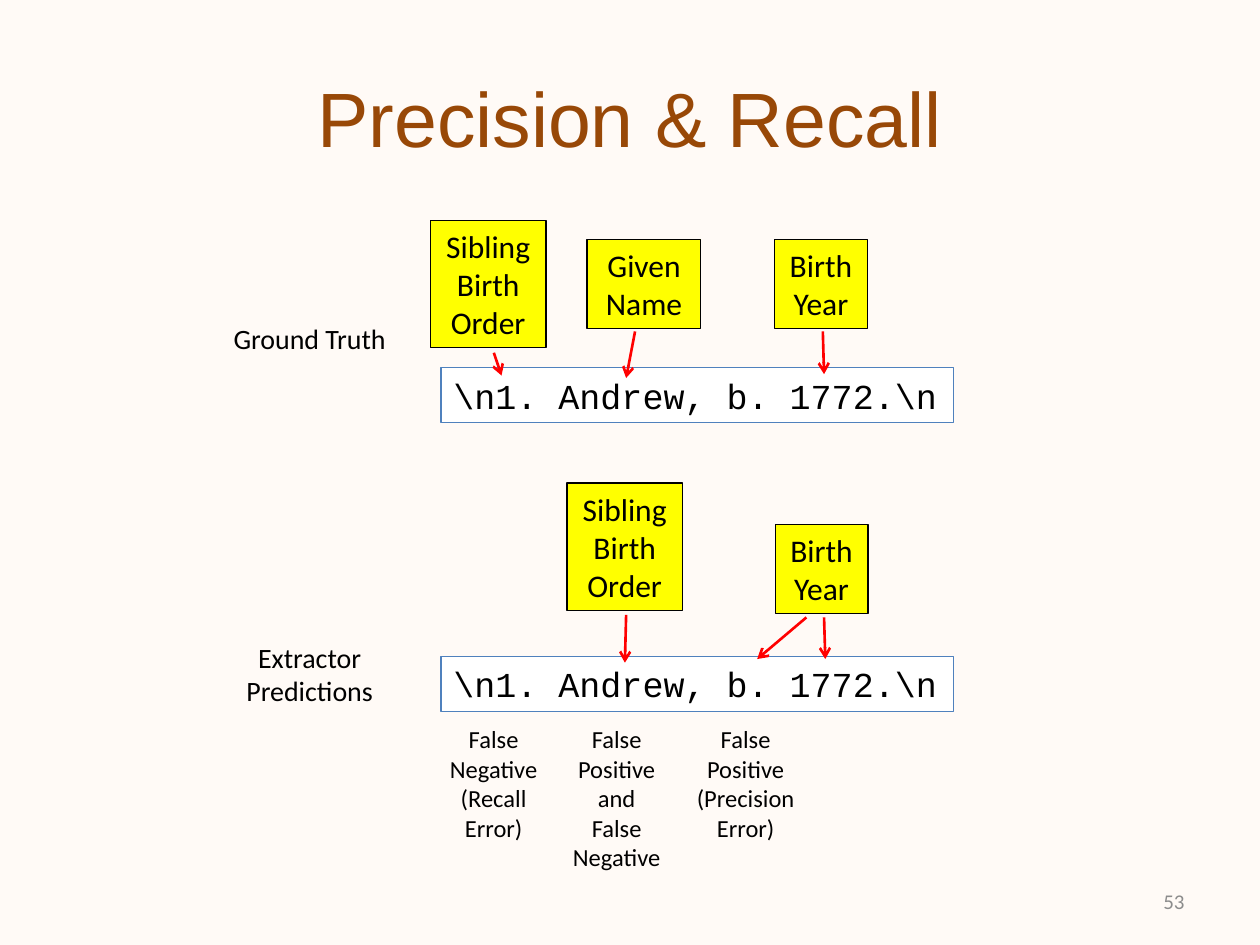
from typing import NamedTuple

from pptx import Presentation
from pptx.dml.color import RGBColor
from pptx.enum.shapes import MSO_CONNECTOR, MSO_SHAPE
from pptx.enum.text import MSO_ANCHOR, MSO_AUTO_SIZE, PP_ALIGN
from pptx.oxml.ns import qn
from pptx.util import Pt
from lxml.etree import SubElement

COLORS = {
    "background": "FFFAF6",
    "title": "984807",
    "text": "000000",
    "number": "8C8C8C",
    "tag": "FFFF00",
    "code": "FFFFFF",
    "code_line": "4F81BD",
    "arrow": "FF0000",
}


class Style(NamedTuple):
    size: float
    font: str = "Calibri"
    color: str = "text"
    align: PP_ALIGN = PP_ALIGN.CENTER
    anchor: MSO_ANCHOR = MSO_ANCHOR.TOP
    wrap: bool = True
    fill: str | None = None
    line: str | None = None


class Box(NamedTuple):
    text: str
    left: float
    top: float
    width: float
    height: float
    style: Style


class Arrow(NamedTuple):
    x1: float
    y1: float
    x2: float
    y2: float


TITLE = Style(44, "Arial", "title", anchor=MSO_ANCHOR.MIDDLE)
NUMBER = Style(12, color="number", align=PP_ALIGN.RIGHT, anchor=MSO_ANCHOR.MIDDLE)
CODE = Style(20, "Courier New", align=PP_ALIGN.LEFT, anchor=MSO_ANCHOR.MIDDLE,
             wrap=False, fill="code", line="code_line")
TAG = Style(18, anchor=MSO_ANCHOR.MIDDLE, fill="tag", line="text")
LABEL = Style(16)
NOTE = Style(14)

RECORD = "\\n1. Andrew, b. 1772.\\n"
SIBLING = "Sibling Birth Order"
YEAR = "Birth Year"
NOTE_TOP, NOTE_WIDTH = 410.4, 84.2

BOXES = [
    Box("53", 516, 500.4, 168, 28.8, NUMBER),
    Box("Ground Truth", 126, 180, 102, 26.6, LABEL),
    Box(RECORD, 252, 210, 293, 31.6, CODE),
    Box(SIBLING, 246, 126, 66, 72.7, TAG),
    Box("Given Name", 335.5, 136.7, 65, 50.9, TAG),
    Box(YEAR, 442.5, 136.7, 53.3, 50.9, TAG),
    Box("Extractor\nPredictions", 126, 362.2, 102, 46, LABEL),
    Box(RECORD, 252, 375, 293, 31.6, CODE),
    Box(SIBLING, 324, 276, 66, 72.7, TAG),
    Box(YEAR, 443, 299.6, 53, 50.9, TAG),
    Box("False\nNegative\n(Recall\nError)", 240, NOTE_TOP, NOTE_WIDTH, 75, NOTE),
    Box("False\nPositive\nand\nFalse\nNegative", 310.3, NOTE_TOP, NOTE_WIDTH, 92, NOTE),
    Box("False\nPositive\n(Precision\nError)", 384, NOTE_TOP, NOTE_WIDTH, 75, NOTE),
]

ARROWS = [
    Arrow(282.2, 201.6, 286.6, 214.6),
    Arrow(362.9, 189.4, 357.8, 216),
    Arrow(470.2, 189.4, 470.9, 213.8),
    Arrow(357.8, 351.4, 357.1, 378.7),
    Arrow(470.9, 352.8, 471.6, 376.6),
    Arrow(460.8, 352.8, 432.7, 376.6),
]


def rgb(name: str) -> RGBColor:
    return RGBColor.from_string(COLORS[name])


def write_text(sp, text: str, style: Style) -> None:
    tf = sp.text_frame
    tf.text = text
    frame_format = {"word_wrap": style.wrap, "vertical_anchor": style.anchor}
    for name, value in frame_format.items():
        setattr(tf, name, value)
    font_format = {"size": Pt(style.size), "name": style.font}
    for p in tf.paragraphs:
        p.alignment = style.align
        for r in p.runs:
            for name, value in font_format.items():
                setattr(r.font, name, value)
            r.font.color.rgb = rgb(style.color)


def place(sp, left: float, top: float, width: float, height: float) -> None:
    bounds = {"left": left, "top": top, "width": width, "height": height}
    for name, value in bounds.items():
        setattr(sp, name, Pt(value))


def add_box(s, box: Box) -> None:
    """Draw a filled rectangle, or a plain text box when the style has no fill."""
    bounds = [Pt(v) for v in (box.left, box.top, box.width, box.height)]
    if box.style.fill:
        sp = s.shapes.add_shape(MSO_SHAPE.RECTANGLE, *bounds)
        sp.shadow.inherit = False
        sp.fill.solid()
        sp.fill.fore_color.rgb = rgb(box.style.fill)
        sp.line.color.rgb = rgb(box.style.line)
        sp.line.width = Pt(0.75)
    else:
        sp = s.shapes.add_textbox(*bounds)
    write_text(sp, box.text, box.style)
    if box.style is not NUMBER:
        sp.text_frame.auto_size = MSO_AUTO_SIZE.SHAPE_TO_FIT_TEXT


def add_arrow(s, arrow: Arrow) -> None:
    cxn = s.shapes.add_connector(MSO_CONNECTOR.STRAIGHT, *[Pt(v) for v in arrow])
    cxn.line.color.rgb = rgb("arrow")
    cxn.line.width = Pt(1.5)
    SubElement(cxn.line._get_or_add_ln(), qn("a:tailEnd"), type="arrow")
    SubElement(cxn._element.spPr, qn("a:effectLst"))


def main() -> None:
    prs = Presentation()
    prs.slide_width, prs.slide_height = Pt(720), Pt(540)
    s = prs.slides.add_slide(prs.slide_layouts[5])
    s.background.fill.solid()
    s.background.fill.fore_color.rgb = rgb("background")

    place(s.shapes.title, 36, 21.6, 648, 90)
    write_text(s.shapes.title, "Precision & Recall", TITLE)
    for box in BOXES:
        add_box(s, box)
    for arrow in ARROWS:
        add_arrow(s, arrow)
    prs.save("out.pptx")


if __name__ == "__main__":
    main()
